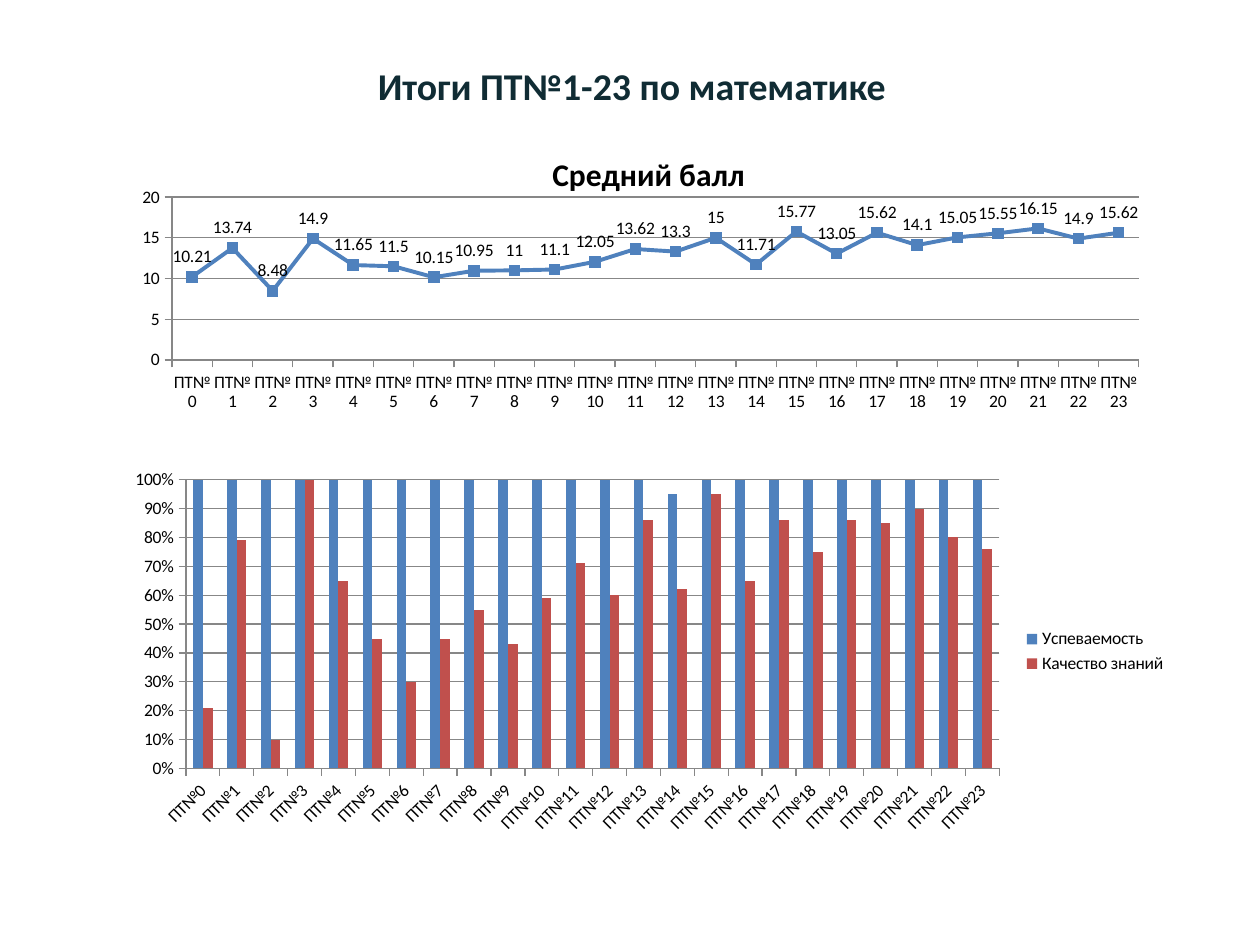
from dataclasses import dataclass

from lxml.etree import SubElement
from pptx import Presentation
from pptx.chart.chart import Chart
from pptx.chart.data import CategoryChartData
from pptx.dml.color import RGBColor
from pptx.enum.chart import (XL_CHART_TYPE, XL_LABEL_POSITION, XL_LEGEND_POSITION,
                             XL_MARKER_STYLE, XL_TICK_MARK)
from pptx.enum.text import MSO_ANCHOR, PP_ALIGN
from pptx.oxml.ns import qn
from pptx.util import Inches, Pt

FONT = "Calibri"
BLACK = RGBColor(0x00, 0x00, 0x00)
HEADING = RGBColor(0x10, 0x2C, 0x34)
BLUE = RGBColor(0x4F, 0x81, 0xBD)
RED = RGBColor(0xC0, 0x50, 0x4D)
GRAY = RGBColor(0x87, 0x87, 0x87)

TESTS = [f"ПТ№{number}" for number in range(24)]
AVERAGE_SCORES = [10.21, 13.74, 8.48, 14.9, 11.65, 11.5, 10.15, 10.95,
                  11, 11.1, 12.05, 13.62, 13.3, 15, 11.71, 15.77,
                  13.05, 15.62, 14.1, 15.05, 15.55, 16.15, 14.9, 15.62]
PASS_RATES = [0.95 if test == "ПТ№14" else 1 for test in TESTS]
QUALITY_RATES = [0.21, 0.79, 0.1, 1, 0.65, 0.45, 0.3, 0.45,
                 0.55, 0.43, 0.59, 0.71, 0.6, 0.86, 0.62, 0.95,
                 0.65, 0.86, 0.75, 0.86, 0.85, 0.9, 0.8, 0.76]


@dataclass
class Frame:
    """A rectangle in inches."""
    left: float
    top: float
    width: float
    height: float

    def lengths(self) -> list:
        return [Inches(n) for n in (self.left, self.top, self.width, self.height)]


@dataclass
class ChartPlan:
    kind: XL_CHART_TYPE
    frame: Frame
    series: dict
    plot: dict
    maximum: float
    step: float
    number_format: str


def set_layout(element, shares: dict) -> None:
    """Place a chart part by shares of the chart's size."""
    layout = element.find(qn("c:layout"))
    if layout is None:
        layout = element.makeelement(qn("c:layout"))
        element.insert(0, layout)
    manual = SubElement(layout, qn("c:manualLayout"))
    if "w" in shares:
        SubElement(manual, qn("c:layoutTarget")).set("val", "inner")
    for side in ("x", "y"):
        SubElement(manual, qn(f"c:{side}Mode")).set("val", "edge")
    for name, share in shares.items():
        SubElement(manual, qn(f"c:{name}")).set("val", str(share))


def style_line(line) -> None:
    line.color.rgb = GRAY
    line.width = Pt(0.75)


def add_chart(page, plan: ChartPlan) -> Chart:
    data = CategoryChartData()
    data.categories = TESTS
    for name, values in plan.series.items():
        data.add_series(name, values)
    chart = page.shapes.add_chart(plan.kind, *plan.frame.lengths(), data).chart
    chart.font.name = FONT
    chart.font.size = Pt(10)
    chart.font.color.rgb = BLACK
    chart.has_title = False
    chart.has_legend = False
    set_layout(chart.plots[0]._element.getparent(), plan.plot)
    for axis in (chart.category_axis, chart.value_axis):
        axis.major_tick_mark = XL_TICK_MARK.OUTSIDE
        axis.minor_tick_mark = XL_TICK_MARK.NONE
        style_line(axis.format.line)
    scale = chart.value_axis
    scale.minimum_scale = 0
    scale.maximum_scale = plan.maximum
    scale.major_unit = plan.step
    scale.has_major_gridlines = True
    style_line(scale.major_gridlines.format.line)
    scale.tick_labels.number_format = plan.number_format
    scale.tick_labels.number_format_is_linked = False
    return chart


def add_heading(page) -> None:
    box = page.shapes.add_textbox(*Frame(1.14, 0.52, 7.75, 0.32).lengths())
    frame = box.text_frame
    frame.word_wrap = True
    frame.vertical_anchor = MSO_ANCHOR.MIDDLE
    frame.margin_top = frame.margin_bottom = 0
    para = frame.paragraphs[0]
    para.text = "Итоги ПТ№1-23 по математике"
    para.alignment = PP_ALIGN.CENTER
    para.font.name = FONT
    para.font.size = Pt(21.6)
    para.font.bold = True
    para.font.color.rgb = HEADING


def add_score_chart(page) -> None:
    name = "Средний балл"
    chart = add_chart(page, ChartPlan(
        XL_CHART_TYPE.LINE_MARKERS, Frame(0.98, 0.99, 8.19, 2.52),
        {name: AVERAGE_SCORES}, dict(x=0.047, y=0.228, w=0.937, h=0.513),
        20, 5, "General"))
    chart.has_title = True
    para = chart.chart_title.text_frame.paragraphs[0]
    para.text = name
    para.font.name = FONT
    para.font.size = Pt(18)
    para.font.bold = True
    para.font.color.rgb = BLACK
    set_layout(chart.chart_title._element, dict(x=0.41, y=0.07))
    scores = chart.series[0]
    scores.smooth = False
    scores.format.line.color.rgb = BLUE
    scores.format.line.width = Pt(2.25)
    scores.marker.style = XL_MARKER_STYLE.SQUARE
    scores.marker.size = 6
    scores.marker.format.fill.solid()
    scores.marker.format.fill.fore_color.rgb = BLUE
    scores.marker.format.line.color.rgb = BLUE
    labels = scores.data_labels
    labels.show_value = True
    labels.position = XL_LABEL_POSITION.ABOVE


def add_rate_chart(page) -> None:
    chart = add_chart(page, ChartPlan(
        XL_CHART_TYPE.COLUMN_CLUSTERED, Frame(0.91, 3.67, 8.45, 3),
        {"Успеваемость": PASS_RATES, "Качество знаний": QUALITY_RATES},
        dict(x=0.067, y=0.046, w=0.764, h=0.764), 1, 0.1, "0%"))
    chart.has_legend = True
    chart.legend.position = XL_LEGEND_POSITION.RIGHT
    chart.legend.include_in_layout = False
    bars = chart.plots[0]
    bars.gap_width = 150
    bars.overlap = 0
    bars.vary_by_categories = False
    for series, color in zip(bars.series, (BLUE, RED)):
        series.format.fill.solid()
        series.format.fill.fore_color.rgb = color
    axis = chart.category_axis
    axis.tick_labels.font.size = Pt(10)
    axis._element.find(f"{qn('c:txPr')}/{qn('a:bodyPr')}").set("rot", str(-45 * 60000))


def main() -> None:
    deck = Presentation()
    deck.slide_width, deck.slide_height = Inches(10), Inches(7.5)
    page = deck.slides.add_slide(deck.slide_layouts[6])
    add_score_chart(page)
    add_heading(page)
    add_rate_chart(page)
    deck.save("out.pptx")


if __name__ == "__main__":
    main()
